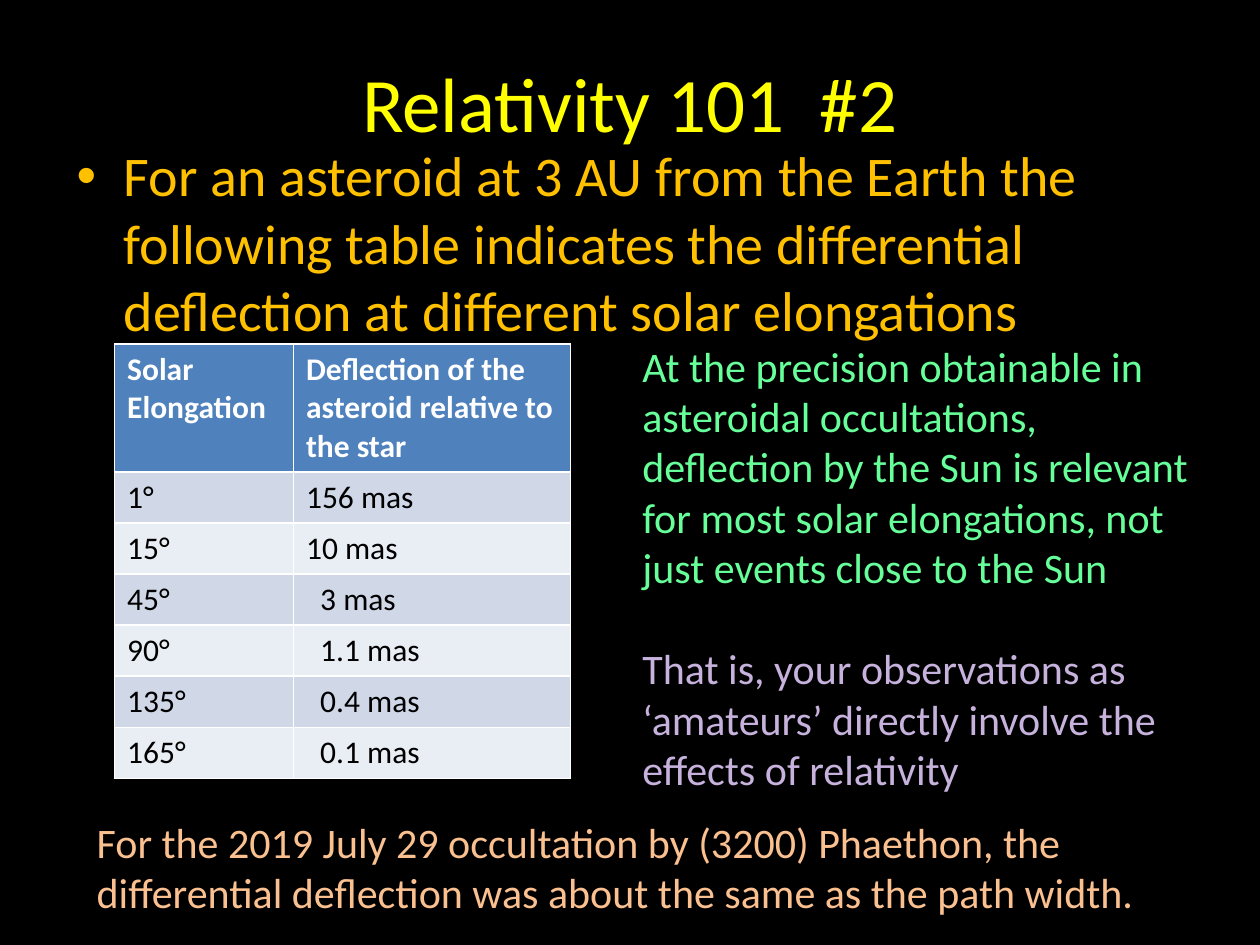
from lxml import etree
from pptx import Presentation
from pptx.dml.color import RGBColor
from pptx.enum.text import MSO_ANCHOR, PP_ALIGN
from pptx.oxml.ns import qn
from pptx.util import Pt

CENTER = PP_ALIGN.CENTER
LEFT = PP_ALIGN.LEFT
TOP = MSO_ANCHOR.TOP
MIDDLE = MSO_ANCHOR.MIDDLE

BLACK = RGBColor(0x00, 0x00, 0x00)
WHITE = RGBColor(0xFF, 0xFF, 0xFF)
YELLOW = RGBColor(0xFF, 0xFF, 0x00)
AMBER = RGBColor(0xFF, 0xC0, 0x00)
GREEN = RGBColor(0x66, 0xFF, 0x99)
LILAC = RGBColor(0xC6, 0xB2, 0xDC)
PEACH = RGBColor(0xFA, 0xC0, 0x90)
HEADER_BLUE = RGBColor(0x4F, 0x81, 0xBD)
BANDS = (RGBColor(0xD0, 0xD8, 0xE8), RGBColor(0xE9, 0xED, 0xF4))


class SlideBuilder:
    """Hold the text style and the current slide, and add its elements."""

    font_name = "Calibri"

    def __init__(self, slide):
        self.slide = slide
        fill = slide.background.fill
        fill.solid()
        fill.fore_color.rgb = BLACK

    def add_words(self, paragraph, words, size, color, bold=False, **layout):
        run = paragraph.add_run()
        run.text = words
        style = {"name": self.font_name, "size": Pt(size), "bold": bold}
        for name, value in style.items():
            setattr(run.font, name, value)
        run.font.color.rgb = color
        for name, value in ({"alignment": LEFT} | layout).items():
            setattr(paragraph, name, value)

    def title(self, words, box, size, color):
        heading = self.slide.shapes.title
        for name, value in zip(("left", "top", "width", "height"), box):
            setattr(heading, name, Pt(value))
        heading.text_frame.vertical_anchor = MIDDLE
        self.add_words(heading.text_frame.paragraphs[0], words, size, color, alignment=CENTER)

    def text(self, box, size, passages, gap=0):
        frame = self.slide.shapes.add_textbox(*map(Pt, box)).text_frame
        frame.word_wrap = True
        frame.vertical_anchor = TOP
        for index, (words, color) in enumerate(passages):
            paragraph = frame.add_paragraph() if index else frame.paragraphs[0]
            self.add_words(paragraph, words, size, color, space_before=Pt(gap if index else 0))
        return frame

    def bullet(self, box, size, words, color, indent):
        paragraph = self.text(box, size, [(words, color)]).paragraphs[0]
        paragraph.space_before = Pt(size * 0.2)
        properties = paragraph._p.get_or_add_pPr()
        properties.set("marL", str(Pt(indent)))
        properties.set("indent", str(-Pt(indent)))
        etree.SubElement(properties, qn("a:buFont")).set("typeface", "Arial")
        etree.SubElement(properties, qn("a:buChar")).set("char", "•")

    def table(self, box, size, widths, heights, rows):
        grid = self.slide.shapes.add_table(len(rows), len(widths), *map(Pt, box)).table
        for column, width in zip(grid.columns, widths):
            column.width = Pt(width)
        for index, (row, height, values) in enumerate(zip(grid.rows, heights, rows)):
            row.height = Pt(height)
            header = index == 0
            for cell, value in zip(row.cells, values):
                cell.fill.solid()
                cell.fill.fore_color.rgb = HEADER_BLUE if header else BANDS[(index - 1) % 2]
                color = WHITE if header else BLACK
                self.add_words(cell.text_frame.paragraphs[0], value, size, color, bold=header)
        return grid


def main():
    presentation = Presentation()
    presentation.slide_width, presentation.slide_height = Pt(720), Pt(540)
    builder = SlideBuilder(presentation.slides.add_slide(presentation.slide_layouts[5]))

    builder.title("Relativity 101  #2", (36, 21.6, 648, 72.7), 44, YELLOW)
    builder.bullet(
        (36.7, 77, 648, 356.4), 32,
        "For an asteroid at 3 AU from the Earth the following table indicates "
        "the differential deflection at different solar elongations",
        AMBER, 27)

    deflections = [
        ("Solar Elongation", "Deflection of the asteroid relative to the star"),
        ("1°", "156 mas"), ("15°", "10 mas"), ("45°", "3 mas"),
        ("90°", "1.1 mas"), ("135°", "0.4 mas"), ("165°", "0.1 mas"),
    ]
    heights = [73] + [29.2] * (len(deflections) - 1)
    deflection_table = builder.table(
        (65.5, 196.6, 260.6, sum(heights)), 18, (102.2, 158.4), heights, deflections)
    for row in range(3, len(deflections)):
        deflection_table.cell(row, 1).margin_left = Pt(15.3)

    builder.text((360, 190.8, 329, 269.3), 24, [
        ("At the precision obtainable in asteroidal occultations, deflection by the Sun "
         "is relevant for most solar elongations, not just events close to the Sun", GREEN),
        ("That is, your observations as ‘amateurs’ directly involve the effects of "
         "relativity", LILAC),
    ], gap=29)
    builder.text((48.2, 463, 623.5, 65.5), 24, [
        ("For the 2019 July 29 occultation by (3200) Phaethon, the differential "
         "deflection was about the same as the path width.", PEACH),
    ])
    presentation.save("out.pptx")


if __name__ == "__main__":
    main()
